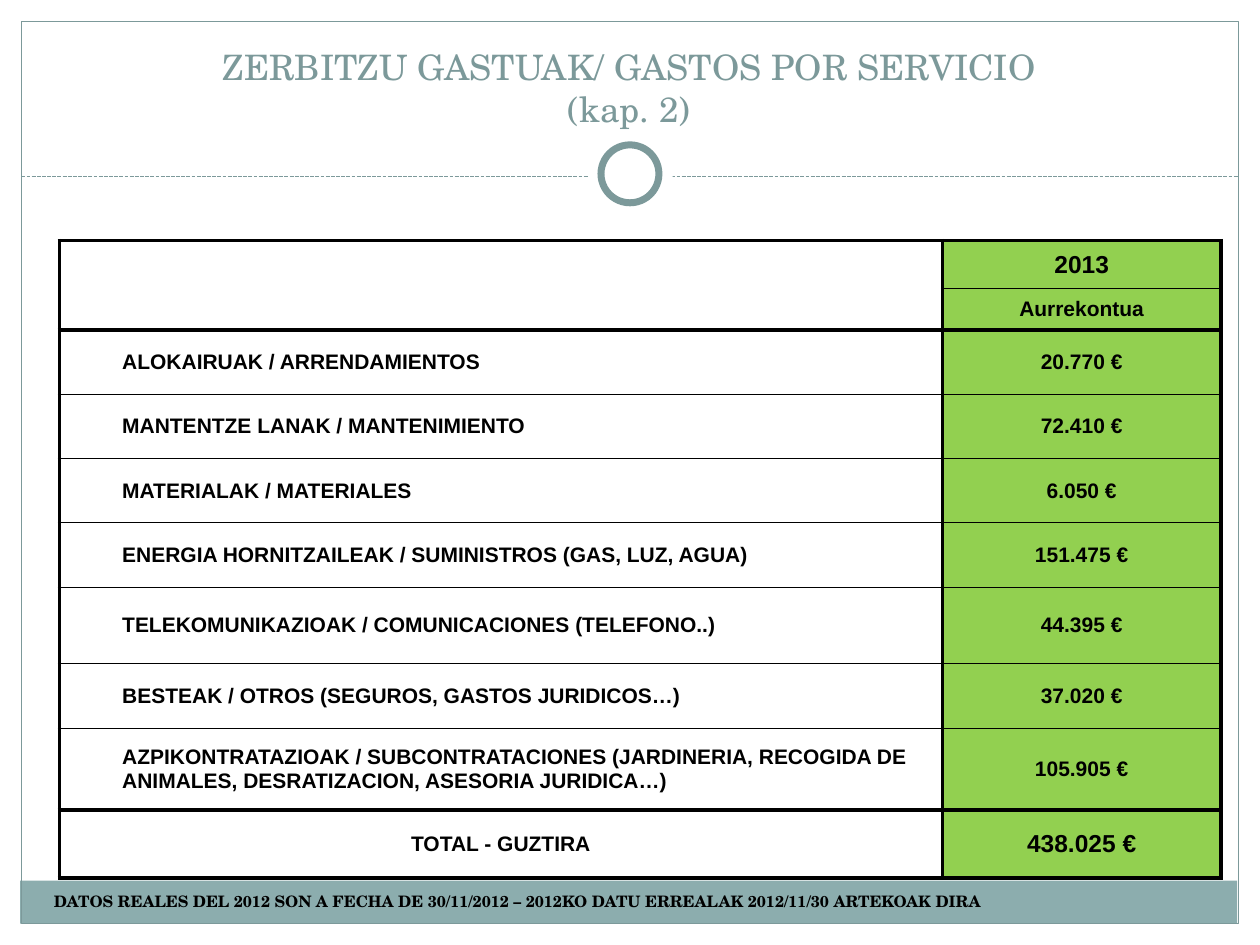
from typing import NamedTuple, Optional

import pptx
import pptx.dml.color
import pptx.enum.dml
import pptx.enum.shapes
import pptx.enum.text
import pptx.oxml.ns
import pptx.util
from lxml import etree
from pptx.util import Inches

MSO_SHAPE = pptx.enum.shapes.MSO_SHAPE
ALIGN = pptx.enum.text.PP_ALIGN
ANCHOR = pptx.enum.text.MSO_ANCHOR
qn = pptx.oxml.ns.qn

TEAL, BAND, WHITE, BLACK, GREEN = "7C999A", "8CADAE", "FFFFFF", "000000", "92D050"
SERIF, SANS = "TeX Gyre Schola", "Arial"
HEAVY, THIN = 2.25, 0.5


class Panel(NamedTuple):
    x: float
    y: float
    w: float
    h: float
    fill: Optional[str] = WHITE
    line_width: float = 0
    kind: MSO_SHAPE = MSO_SHAPE.RECTANGLE


class BudgetRow(NamedTuple):
    label: str
    amount: str
    height: float = 0.51
    label_size: float = 12
    amount_size: float = 12
    indent: float = 0.5


FRAME = [
    Panel(0, 0, 10, 1.52),
    Panel(0, 0, 0.17, 7.5),
    Panel(9.83, 0, 0.17, 7.5),
    Panel(0.16, 6.99, 9.66, 0.34, BAND),
    Panel(0.17, 0.17, 9.66, 7.16, None, 0.75),
]
RING = [
    Panel(4.67, 1.05, 0.67, 0.67, kind=MSO_SHAPE.OVAL),
    Panel(4.77, 1.15, 0.46, 0.46, line_width=4, kind=MSO_SHAPE.OVAL),
]
ROWS = [
    BudgetRow("", "2013", 0.38, amount_size=14),
    BudgetRow("", "Aurrekontua", 0.33),
    BudgetRow("ALOKAIRUAK / ARRENDAMIENTOS", "20.770 €"),
    BudgetRow("MANTENTZE LANAK / MANTENIMIENTO", "72.410 €"),
    BudgetRow("MATERIALAK / MATERIALES", "6.050 €"),
    BudgetRow("ENERGIA HORNITZAILEAK / SUMINISTROS (GAS, LUZ, AGUA)", "151.475 €"),
    BudgetRow("TELEKOMUNIKAZIOAK / COMUNICACIONES (TELEFONO..)", "44.395 €", 0.61),
    BudgetRow("BESTEAK / OTROS (SEGUROS, GASTOS JURIDICOS…)", "37.020 €"),
    BudgetRow("AZPIKONTRATAZIOAK / SUBCONTRATACIONES (JARDINERIA, RECOGIDA DE "
              "ANIMALES, DESRATIZACION, ASESORIA JURIDICA…)", "105.905 €", 0.65),
    BudgetRow("TOTAL - GUZTIRA", "438.025 €", 0.54, amount_size=14, indent=0),
]
HEADER_ROWS = 2
HEAVY_EDGES = {0, HEADER_ROWS, len(ROWS) - 1, len(ROWS)}


def rgb(color: str) -> pptx.dml.color.RGBColor:
    return pptx.dml.color.RGBColor.from_string(color)


def set_font(p, name: str, size: float, color: str, bold: bool = False) -> None:
    p.font.name = name
    p.font.size = pptx.util.Pt(size)
    p.font.bold = bold
    p.font.color.rgb = rgb(color)


def set_fill(fill, color: Optional[str]) -> None:
    if color is None:
        fill.background()
    else:
        fill.solid()
        fill.fore_color.rgb = rgb(color)


def draw_panel(s, panel: Panel) -> None:
    sp = s.shapes.add_shape(panel.kind, *map(Inches, panel[:4]))
    sp.shadow.inherit = False
    set_fill(sp.fill, panel.fill)
    if panel.line_width:
        sp.line.color.rgb = rgb(TEAL)
        sp.line.width = pptx.util.Pt(panel.line_width)
    else:
        sp.line.fill.background()


def draw_divider(s) -> None:
    line = s.shapes.add_connector(
        pptx.enum.shapes.MSO_CONNECTOR.STRAIGHT,
        Inches(0.17), Inches(1.4), Inches(9.83), Inches(1.4))
    line.line.color.rgb = rgb(TEAL)
    line.line.width = pptx.util.Pt(0.75)
    line.line.dash_style = pptx.enum.dml.MSO_LINE.SQUARE_DOT
    etree.SubElement(line.element.spPr, qn("a:effectLst"))


def draw_footer(s) -> None:
    sp = s.shapes.add_textbox(Inches(0.33), Inches(7.03), Inches(7.87), Inches(0.4))
    tf = sp.text_frame
    tf.word_wrap = True
    p = tf.paragraphs[0]
    p.text = ("DATOS REALES DEL 2012 SON A FECHA DE 30/11/2012 – "
              "2012KO DATU ERREALAK 2012/11/30 ARTEKOAK DIRA")
    set_font(p, SERIF, 9, BLACK, True)


def draw_title(s) -> None:
    title = s.shapes.title
    title.element.getparent().append(title.element)
    title.left, title.top = Inches(0.33), Inches(0.25)
    title.width, title.height = Inches(9.33), Inches(0.83)
    tf = title.text_frame
    tf.auto_size = pptx.enum.text.MSO_AUTO_SIZE.NONE
    tf.vertical_anchor = ANCHOR.BOTTOM
    p = tf.paragraphs[0]
    p.add_run().text = "ZERBITZU GASTUAK/ GASTOS POR SERVICIO"
    p.add_line_break()
    p.add_run().text = "(kap. 2)"
    p.alignment = ALIGN.CENTER
    set_font(p, SERIF, 20, TEAL)


def set_borders(cell, top: float, bottom: float) -> None:
    tcPr = cell._tc.get_or_add_tcPr()
    widths = {"a:lnL": HEAVY, "a:lnR": HEAVY, "a:lnT": top, "a:lnB": bottom}
    for i, (tag, width) in enumerate(widths.items()):
        ln = etree.Element(qn(tag), w=str(int(pptx.util.Pt(width))))
        fill = etree.SubElement(ln, qn("a:solidFill"))
        etree.SubElement(fill, qn("a:srgbClr"), val=BLACK)
        tcPr.insert(i, ln)


def fill_cell(cell, text: str, size: float, color: Optional[str], indent: float) -> None:
    cell.margin_left = cell.margin_right = cell.margin_top = cell.margin_bottom = 0
    cell.vertical_anchor = ANCHOR.MIDDLE
    set_fill(cell.fill, color)
    p = cell.text_frame.paragraphs[0]
    p.text = text
    p.alignment = ALIGN.LEFT if indent else ALIGN.CENTER
    if indent:
        pPr = p._p.get_or_add_pPr()
        pPr.set("marL", str(Inches(indent)))
        pPr.set("indent", "0")
    set_font(p, SANS, size, BLACK, True)


def draw_table(s) -> None:
    height = sum(row.height for row in ROWS)
    table = s.shapes.add_table(len(ROWS), 2, Inches(0.47), Inches(1.91),
                               Inches(9.22), Inches(height)).table
    table.first_row = table.horz_banding = False
    for column, width in zip(table.columns, (7.01, 2.21)):
        column.width = Inches(width)
    for i, row in enumerate(ROWS):
        table.rows[i].height = Inches(row.height)
        label, amount = table.cell(i, 0), table.cell(i, 1)
        fill_cell(label, row.label, row.label_size, None, row.indent)
        fill_cell(amount, row.amount, row.amount_size, GREEN, 0)
        top, bottom = (HEAVY if edge in HEAVY_EDGES else THIN for edge in (i, i + 1))
        set_borders(amount, top, bottom)
        if i < HEADER_ROWS:
            top = bottom = HEAVY
        set_borders(label, top, bottom)
    table.cell(0, 0).merge(table.cell(HEADER_ROWS - 1, 0))


def main() -> None:
    prs = pptx.Presentation()
    prs.slide_width, prs.slide_height = Inches(10), Inches(7.5)
    s = prs.slides.add_slide(prs.slide_layouts[5])
    for panel in FRAME:
        draw_panel(s, panel)
    draw_divider(s)
    for panel in RING:
        draw_panel(s, panel)
    draw_footer(s)
    draw_title(s)
    draw_table(s)
    prs.save("out.pptx")


if __name__ == "__main__":
    main()
